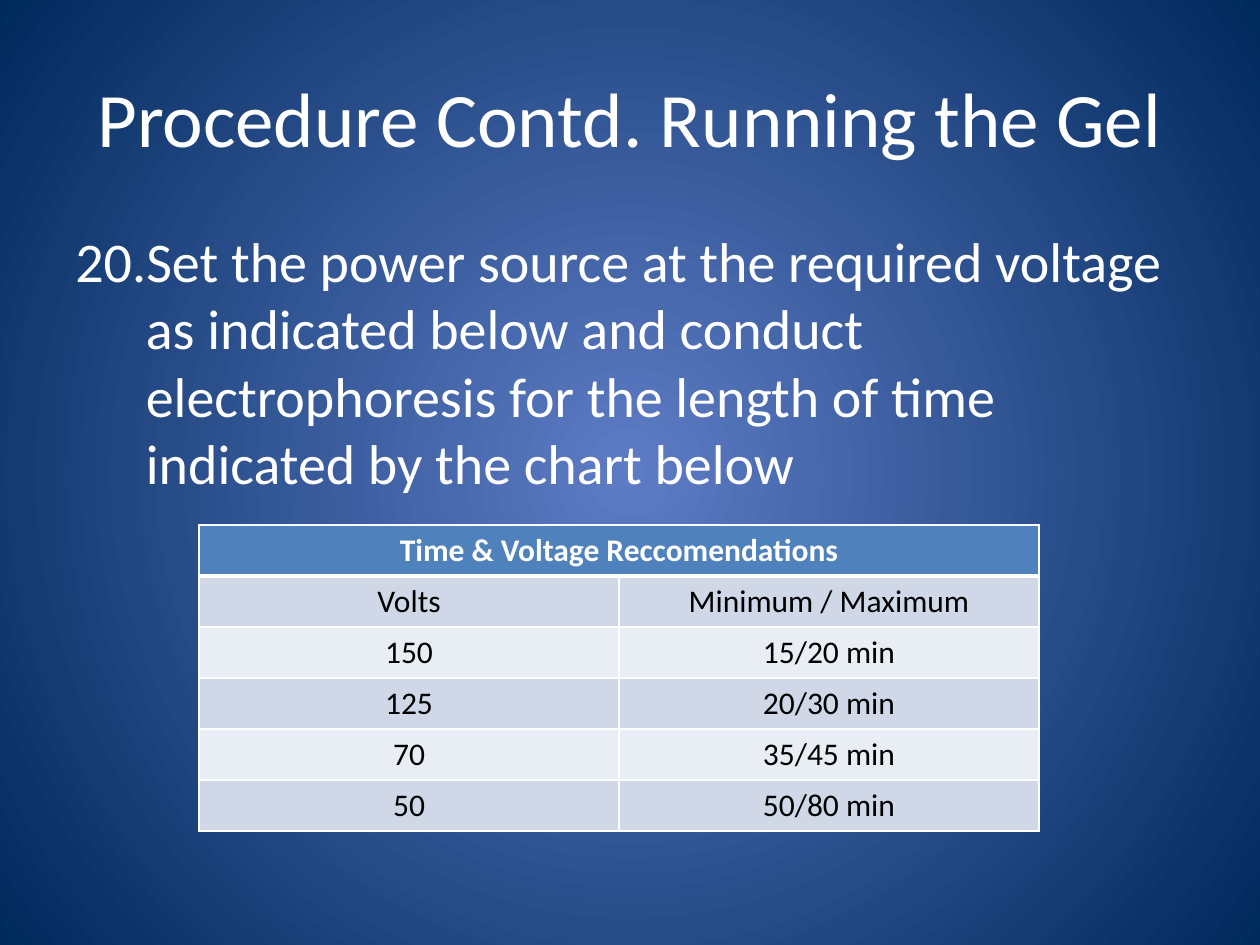
from lxml import etree
from pptx import Presentation
from pptx.dml.color import RGBColor as RGB
from pptx.enum.text import MSO_ANCHOR as Anchor, PP_ALIGN as Align
from pptx.oxml.ns import qn
from pptx.util import Inches, Pt

WHITE = RGB(0xFF, 0xFF, 0xFF)
BLACK = RGB(0x00, 0x00, 0x00)
GLOW = RGB(0x5E, 0x7C, 0xC5)
NAVY = RGB(0x00, 0x29, 0x5C)
HEADER = RGB(0x4F, 0x81, 0xBD)
BANDS = [RGB(0xE9, 0xED, 0xF4), RGB(0xD0, 0xD8, 0xE8)]

TABLE_TITLE = "Time & Voltage Reccomendations"
VOLTAGE_ROWS = [
    ("Volts", "Minimum / Maximum"),
    ("150", "15/20 min"),
    ("125", "20/30 min"),
    ("70", "35/45 min"),
    ("50", "50/80 min"),
]


def add_xml(parent, tag, **attrs):
    """Append a DrawingML child element."""
    el = etree.SubElement(parent, qn(tag))
    for name, value in attrs.items():
        el.set(name, str(value))
    return el


def write(tf, text, size=18, color=WHITE, bold=False, align=Align.LEFT,
          font="Calibri", before=0):
    """Put formatted text in the first paragraph of a text frame."""
    p = tf.paragraphs[0]
    p.alignment = align
    p.space_before = Pt(before)
    r = p.add_run()
    r.text = text
    r.font.name, r.font.size, r.font.bold = font, Pt(size), bold
    r.font.color.rgb = color
    return p


class Deck:
    """Holds the presentation, its current slide and the shared style."""

    def __init__(self, width=10, height=7.5):
        self.prs = Presentation()
        self.prs.slide_width = Inches(width)
        self.prs.slide_height = Inches(height)
        self.s = self.prs.slides.add_slide(self.prs.slide_layouts[6])

    def box(self, x, y, w, h):
        """Turn shares of the slide's size into lengths."""
        sw, sh = self.prs.slide_width, self.prs.slide_height
        return int(x * sw), int(y * sh), int(w * sw), int(h * sh)

    def radial_background(self, inner, outer):
        fill = self.s.background.fill
        fill.gradient()
        for stop, color in zip(fill.gradient_stops, (inner, outer)):
            stop.color.rgb = color
        grad = next(self.s.element.iter(qn("a:gradFill")))
        grad.remove(grad.find(qn("a:lin")))
        path = add_xml(grad, "a:path", path="circle")
        add_xml(path, "a:fillToRect", l=50000, t=50000, r=50000, b=50000)

    def text(self, text, area, anchor=Anchor.TOP, **fmt):
        tf = self.s.shapes.add_textbox(*self.box(*area)).text_frame
        tf.word_wrap = True
        tf.vertical_anchor = anchor
        return write(tf, text, **fmt)

    def numbered(self, text, area, start, indent=0.56, **fmt):
        p = self.text(text, area, **fmt)
        pPr = p._p.get_or_add_pPr()
        pPr.set("marL", str(Inches(indent)))
        pPr.set("indent", str(-Inches(indent)))
        add_xml(pPr, "a:buFont", typeface="+mj-lt")
        add_xml(pPr, "a:buAutoNum", type="arabicPeriod", startAt=start)

    def cell(self, cell, text, fill, bottom=1, **fmt):
        tcPr = cell._tc.get_or_add_tcPr()
        for side, width in zip("LRTB", (1, 1, 1, bottom)):
            ln = add_xml(tcPr, f"a:ln{side}", w=Pt(width))
            add_xml(add_xml(ln, "a:solidFill"), "a:srgbClr", val=WHITE)
        cell.fill.solid()
        cell.fill.fore_color.rgb = fill
        if text:
            write(cell.text_frame, text, align=Align.CENTER, **fmt)

    def table(self, title, rows, area):
        n_cols = len(rows[0])
        table = self.s.shapes.add_table(
            len(rows) + 1, n_cols, *self.box(*area)).table
        # Title across all columns
        table.cell(0, 0).merge(table.cell(0, n_cols - 1))
        for c in range(n_cols):
            self.cell(table.cell(0, c), "" if c else title, HEADER,
                      bottom=3, bold=True)
        # Banded rows
        for r, values in enumerate(rows, start=1):
            for c, value in enumerate(values):
                self.cell(table.cell(r, c), value, BANDS[r % 2],
                          color=BLACK, bottom=1)


def main():
    deck = Deck()
    deck.radial_background(GLOW, NAVY)

    # Heading
    deck.text("Procedure Contd. Running the Gel", (0.05, 0.04, 0.9, 1 / 6),
              anchor=Anchor.MIDDLE, size=44, align=Align.CENTER)

    # Step 20
    deck.numbered("Set the power source at the required voltage as indicated "
                  "below and conduct electrophoresis for the length of time "
                  "indicated by the chart below",
                  (0.05, 0.7 / 3, 0.9, 0.66), start=20, size=32, before=6.4)

    # Voltage table
    deck.table(TABLE_TITLE, VOLTAGE_ROWS, (0.158, 5 / 9, 2 / 3, 0.324))

    deck.prs.save("out.pptx")


if __name__ == "__main__":
    main()
